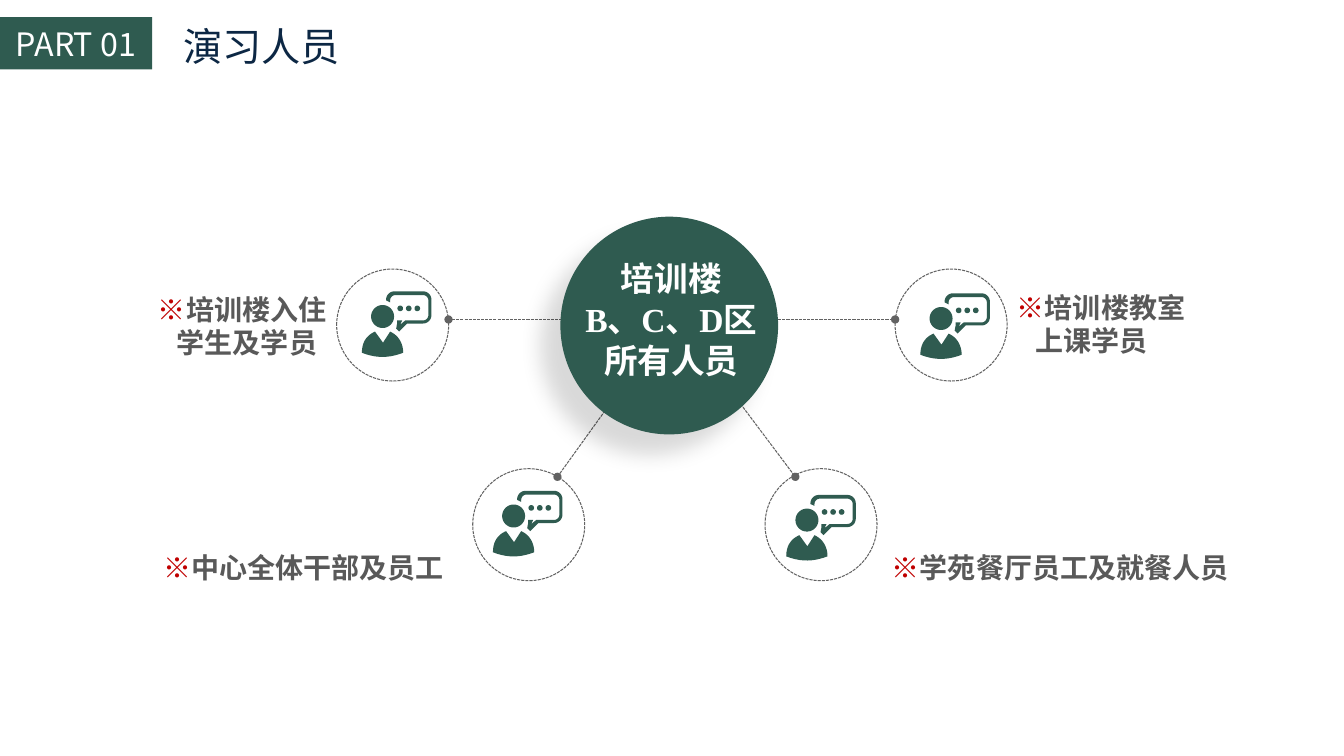
from dataclasses import dataclass
from math import cos, radians, sin

from lxml import etree
from pptx import Presentation
from pptx.dml.color import RGBColor
from pptx.enum.dml import MSO_LINE
from pptx.enum.shapes import MSO_CONNECTOR, MSO_SHAPE
from pptx.enum.text import MSO_ANCHOR, MSO_AUTO_SIZE, PP_ALIGN
from pptx.oxml.ns import qn
from pptx.util import Pt

LEFT, CENTER, JUSTIFY = PP_ALIGN.LEFT, PP_ALIGN.CENTER, PP_ALIGN.JUSTIFY
TOP, MIDDLE = MSO_ANCHOR.TOP, MSO_ANCHOR.MIDDLE
OVAL, RECTANGLE = MSO_SHAPE.OVAL, MSO_SHAPE.RECTANGLE
STRAIGHT, SYS_DASH = MSO_CONNECTOR.STRAIGHT, MSO_LINE.SQUARE_DOT
NO_AUTOFIT = MSO_AUTO_SIZE.NONE

GREEN, NAVY, WHITE = "2F5B50", "0C2744", "FFFFFF"
RED, DARK_GRAY, LINE_GRAY = "C00000", "595959", "626262"
SANS, SERIF = "Noto Sans CJK SC", "Times New Roman"
RING_SIZE = 80
SECOND_LINE_INDENT = 13.5

Point = tuple[float, float]
Run = tuple[str, str]  # text, colour


@dataclass(frozen=True)
class Member:
    ring: Point
    icon: Point
    label_box: tuple[float, float, float, float]
    lines: tuple[str, ...]


@dataclass(frozen=True)
class Spoke:
    start: Point
    end: Point


MEMBERS = (
    Member((240.5, 192.2), (258.5, 208.1), (105.8, 205.2, 139, 55.4), ("培训楼入住", "学生及学员")),
    Member((639.4, 192.2), (657.4, 209.5), (719.3, 203.8, 139.7, 56.9), ("培训楼教室", "上课学员")),
    Member((546.5, 334.8), (561.6, 353.5), (630, 389.5, 267.1, 33.1), ("学苑餐厅员工及就餐人员",)),
    Member((337.7, 334.8), (352.1, 350.6), (109.4, 389.5, 236.9, 33.1), ("中心全体干部及员工",)),
)
SPOKES = (
    Spoke((320.4, 228.2), (639.4, 228.2)),
    Spoke((502.6, 253.4), (568.1, 340.6)),
    Spoke((463, 250.6), (398.2, 340.6)),
)


def color(value: str) -> RGBColor:
    return RGBColor.from_string(value)


def write(shape, paragraphs: list[list[Run]], *, size: float, font: str = SANS,
          bold: bool = False, align=LEFT, anchor=TOP, wrap: bool = True,
          insets: Point = (7.2, 3.6), line_spacing: float | None = None,
          later_indent: float = 0) -> None:
    frame = shape.text_frame
    frame.auto_size = NO_AUTOFIT
    frame.word_wrap = wrap
    frame.vertical_anchor = anchor
    frame.margin_left = frame.margin_right = Pt(insets[0])
    frame.margin_top, frame.margin_bottom = Pt(insets[1]), Pt(0 if anchor == TOP else insets[1])
    for index, runs in enumerate(paragraphs):
        paragraph = frame.paragraphs[0] if index == 0 else frame.add_paragraph()
        paragraph.alignment = align
        if line_spacing:
            paragraph.line_spacing = Pt(line_spacing)
        if index and later_indent:
            paragraph._p.get_or_add_pPr().set("marL", str(Pt(later_indent)))
        for text, run_color in runs:
            run = paragraph.add_run()
            run.text = text
            run.font.size, run.font.bold, run.font.name = Pt(size), bold, font
            run.font.color.rgb = color(run_color)
            etree.SubElement(run._r.get_or_add_rPr(), qn("a:ea"), typeface=SANS)


def add_block(shapes, kind, box: tuple[float, float, float, float], fill: str | None):
    block = shapes.add_shape(kind, *map(Pt, box))
    block.shadow.inherit = False
    if fill:
        block.fill.solid()
        block.fill.fore_color.rgb = color(fill)
        block.line.fill.background()
    else:
        block.fill.background()
        dash(block.line)
    return block


def dash(line) -> None:
    line.color.rgb = color(LINE_GRAY)
    line.width = Pt(0.75)
    line.dash_style = SYS_DASH


def add_spoke(shapes, spoke: Spoke) -> None:
    connector = shapes.add_connector(STRAIGHT, *map(Pt, spoke.start + spoke.end))
    dash(connector.line)
    outline = connector.line._get_or_add_ln()
    for end in ("a:headEnd", "a:tailEnd"):
        etree.SubElement(outline, qn(end), type="oval")
    etree.SubElement(connector._element.spPr, qn("a:effectLst"))


def add_soft_shadow(shape) -> None:
    effects = shape._element.spPr.find(qn("a:effectLst"))
    shadow = etree.SubElement(effects, qn("a:outerShdw"), blurRad=str(Pt(15)), dist=str(Pt(20)),
                              dir=str(135 * 60000), algn="tr", rotWithShape="0")
    tint = etree.SubElement(shadow, qn("a:srgbClr"), val="000000")
    etree.SubElement(tint, qn("a:alpha"), val="15000")


def arc(cx: float, cy: float, radius: float, start: int, end: int, steps: int = 8) -> list[Point]:
    angles = [radians(start + (end - start) * i / steps) for i in range(steps + 1)]
    return [(cx + radius * cos(a), cy + radius * sin(a)) for a in angles]


def bezier(p0: Point, p1: Point, p2: Point, p3: Point, steps: int = 10) -> list[Point]:
    def at(t: float, axis: int) -> float:
        u = 1 - t
        return (u**3 * p0[axis] + 3 * u * u * t * p1[axis]
                + 3 * u * t * t * p2[axis] + t**3 * p3[axis])
    return [(at(i / steps, 0), at(i / steps, 1)) for i in range(steps + 1)]


def speaker_contours() -> list[list[Point]]:
    bubble = [
        *arc(23.3, 6, 6, 180, 270), *arc(43.7, 6, 6, 270, 360), *arc(43.7, 17, 6, 0, 90),
        (32.4, 23), (26.6, 28.8), (24.5, 26.6), (25.2, 23), (25.2, 20.8), (28.8, 20.8),
        (27.4, 23.8), (31, 20.8),
        *arc(43.7, 17, 3.8, 90, 0), *arc(43.7, 6.5, 3.8, 0, -90), *arc(24, 6.5, 3.8, 270, 180),
        (20.2, 7.9), (17.3, 6.5),
    ]
    dots = [arc(x, 12.2, 2, 0, 360, 16) for x in (27.4, 33.5, 39.6)]
    head = arc(14.8, 18, 8.2, 0, 360, 40)
    body = [
        *bezier((29.5, 43.9), (29.5, 36), (25.2, 31), (20.2, 28.8)), (15.1, 36.7),
        *bezier((9.4, 28.8), (4.3, 31), (0, 35.3), (0, 43.9)),
        *bezier((0, 43.9), (10.8, 48.2), (20.2, 47.5), (29.5, 43.9)),
    ]
    return [bubble, *dots, head, body]


def add_speaker(shapes, origin: Point) -> None:
    contours = [[(Pt(origin[0] + x), Pt(origin[1] + y)) for x, y in contour]
                for contour in speaker_contours()]
    builder = shapes.build_freeform(*contours[0][0])
    for index, contour in enumerate(contours):
        if index:
            builder.move_to(*contour[0])
        builder.add_line_segments(contour[1:], close=True)
    speaker = builder.convert_to_shape()
    speaker.shadow.inherit = False
    speaker.fill.solid()
    speaker.fill.fore_color.rgb = color(GREEN)
    speaker.line.fill.background()


def main() -> None:
    deck = Presentation()
    deck.slide_width, deck.slide_height = Pt(960), Pt(540)
    slide = deck.slides.add_slide(deck.slide_layouts[5])
    shapes = slide.shapes

    # Heading
    heading = shapes.title
    heading.left, heading.top, heading.width, heading.height = map(Pt, (123.8, 12.2, 150, 41))
    write(heading, [[("演习人员", NAVY)]], size=28, wrap=False, insets=(7.2, 1.4), line_spacing=36)
    part_tag = add_block(shapes, RECTANGLE, (0, 12.2, 108.7, 37.4), GREEN)
    write(part_tag, [[("PART 01", WHITE)]], size=23, align=CENTER, anchor=MIDDLE, wrap=False)

    # Spokes and rings
    for spoke in SPOKES:
        add_spoke(shapes, spoke)
    for member in MEMBERS:
        add_block(shapes, OVAL, (*member.ring, RING_SIZE, RING_SIZE), None)

    # Hub
    hub = add_block(shapes, OVAL, (400.3, 154.8, 155.5, 155.5), GREEN)
    add_soft_shadow(hub)
    hub_text = shapes.add_textbox(*map(Pt, (408.2, 179.3, 142.6, 97.2)))
    write(hub_text, [[("培训楼", WHITE)], [("B、C、D区所有人员", WHITE)]], size=24, font=SERIF,
          bold=True, align=CENTER, insets=(9.4, 5), line_spacing=29)

    # Members
    for member in MEMBERS:
        add_speaker(shapes, member.icon)
        label = shapes.add_textbox(*map(Pt, member.label_box))
        first, *rest = member.lines
        write(label, [[("※", RED), (first, DARK_GRAY)], *[[(line, DARK_GRAY)] for line in rest]],
              size=20, bold=True, align=JUSTIFY, insets=(7.2, 4), line_spacing=23.6,
              later_indent=SECOND_LINE_INDENT)

    deck.save("out.pptx")


if __name__ == "__main__":
    main()
